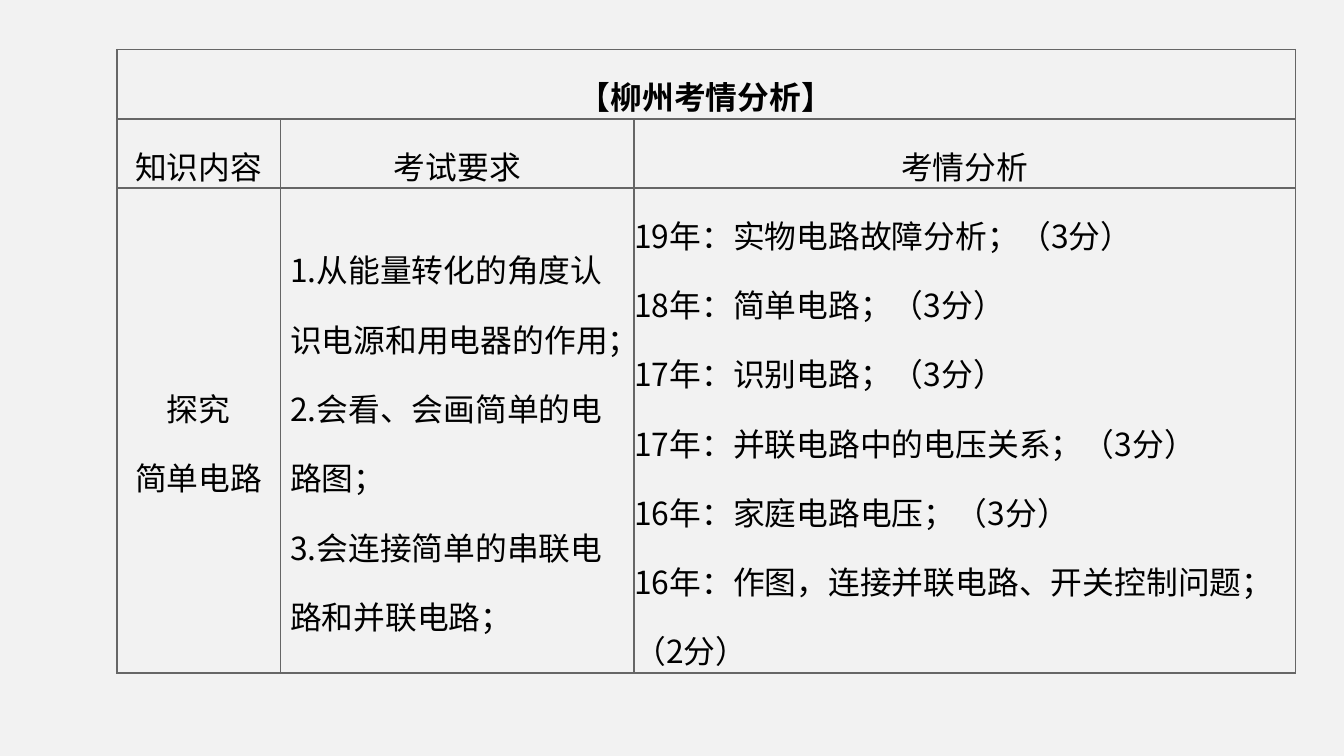
from pptx import Presentation
from pptx.dml.color import RGBColor
from pptx.enum.text import MSO_ANCHOR as Anchor, PP_ALIGN as Align
from pptx.oxml import parse_xml
from pptx.oxml.ns import nsdecls
from pptx.util import Pt

FONT = "Noto Sans CJK SC"
PAPER = RGBColor(0xF2, 0xF2, 0xF2)
INK = RGBColor(0, 0, 0)
RULE = RGBColor(0x66, 0x66, 0x66)

TITLE = "【柳州考情分析】"
HEADS = ["知识内容", "考试要求", "考情分析"]
TOPIC = ["探究", "简单电路"]
NEEDS = [
    "1.从能量转化的角度认识电源和用电器的作用；",
    "2.会看、会画简单的电路图；",
    "3.会连接简单的串联电路和并联电路；",
]
EXAMS = [
    "19年：实物电路故障分析；（3分）",
    "18年：简单电路；（3分）",
    "17年：识别电路；（3分）",
    "17年：并联电路中的电压关系；（3分）",
    "16年：家庭电路电压；（3分）",
    "16年：作图，连接并联电路、开关控制问题；（2分）",
]
ROWS = [[[TITLE], [], []], [[head] for head in HEADS], [TOPIC, NEEDS, EXAMS]]
WIDTHS = [87.8, 189.4, 354.2]
HEIGHTS = [37, 37, 259]
LEFT, TOP = 62.6, 26.6
PAD = 5


def add_rules(cell):
    """Draw a thin line on each side of the cell."""
    props = cell._tc.get_or_add_tcPr()
    for i, side in enumerate("LRTB"):
        props.insert(i, parse_xml(
            f'<a:ln{side} {nsdecls("a")} w="{Pt(1)}"><a:solidFill>'
            f'<a:srgbClr val="{RULE}"/></a:solidFill></a:ln{side}>'))


def write(cell, lines, align, bold):
    cell.text = "\n".join(lines)
    for para in cell.text_frame.paragraphs:
        para.alignment = align
        para.line_spacing = 1.5
        for run in para.runs:
            style = {"size": Pt(17), "name": FONT, "bold": bold}
            for key, value in style.items():
                setattr(run.font, key, value)
            run.font.color.rgb = INK
            run.font._element.append(
                parse_xml(f'<a:ea {nsdecls("a")} typeface="{FONT}"/>'))


deck = Presentation()
deck.slide_width, deck.slide_height = Pt(720), Pt(405)
slide = deck.slides.add_slide(deck.slide_layouts[6])
slide.background.fill.solid()
slide.background.fill.fore_color.rgb = PAPER

table = slide.shapes.add_table(
    len(ROWS), len(WIDTHS), Pt(LEFT), Pt(TOP),
    Pt(sum(WIDTHS)), Pt(sum(HEIGHTS))).table
table.first_row = table.horz_banding = False
for col, width in zip(table.columns, WIDTHS):
    col.width = Pt(width)
for row, height in zip(table.rows, HEIGHTS):
    row.height = Pt(height)
table.cell(0, 0).merge(table.cell(0, 2))

for r, row in enumerate(ROWS):
    for c, lines in enumerate(row):
        cell = table.cell(r, c)
        side = Pt(PAD if lines is NEEDS else 0)
        form = {"margin_left": side, "margin_right": side, "margin_top": 0,
                "margin_bottom": 0, "vertical_anchor": Anchor.MIDDLE}
        for key, value in form.items():
            setattr(cell, key, value)
        cell.fill.solid()
        cell.fill.fore_color.rgb = PAPER
        add_rules(cell)
        if lines:
            align = Align.LEFT if lines in (NEEDS, EXAMS) else Align.CENTER
            write(cell, lines, align, r == 0)

deck.save("out.pptx")
